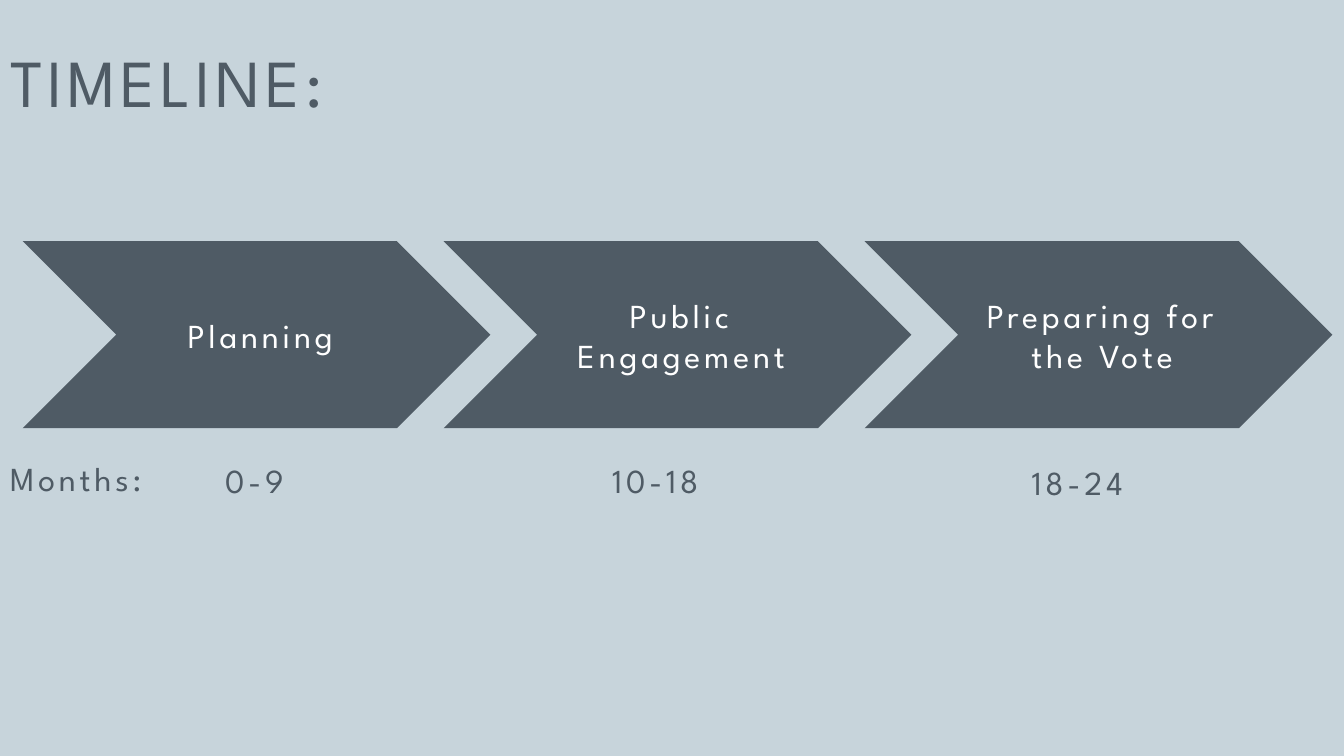
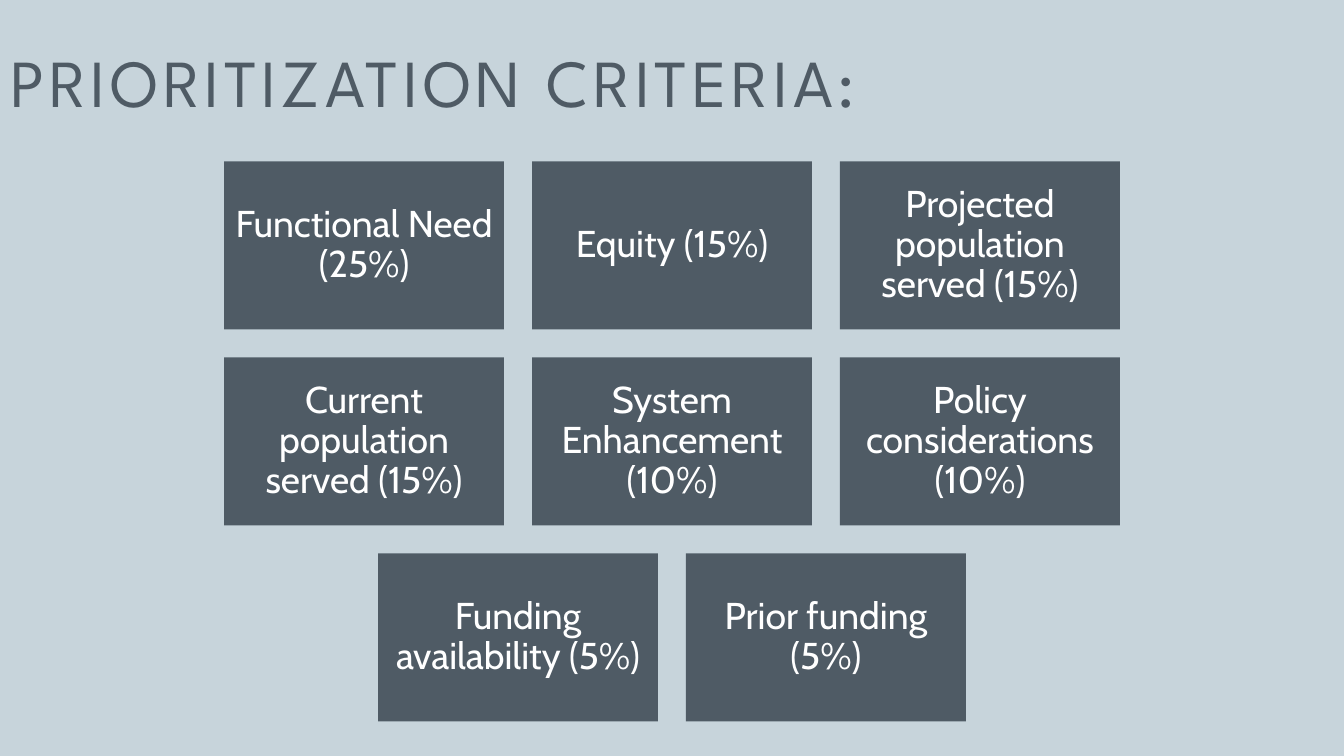
from pptx import Presentation
from pptx.dml.color import RGBColor
from pptx.enum.shapes import MSO_SHAPE as Shape
from pptx.enum.text import MSO_ANCHOR as Anchor, MSO_AUTO_SIZE as AutoSize, PP_ALIGN as Align
from pptx.util import Cm, Pt

BACKGROUND = RGBColor(0xC7, 0xD4, 0xDB)
SLATE = RGBColor(0x4F, 0x5B, 0x65)
WHITE = RGBColor(0xFF, 0xFF, 0xFF)
HEADING_FONT = "League Spartan"
BODY_FONT = "Cabin"
SLIDE_W, SLIDE_H = 50.8, 28.58

PHASES = ["Planning", "Public Engagement", "Preparing for the Vote"]
MONTHS = [
    ("Months:", 0.13, 17.2, 6.88),
    ("0-9", 8.26, 17.25, 3.33),
    ("10-18", 22.89, 17.25, 4.67),
    ("18-24", 38.74, 17.32, 5.05),
]
CRITERIA = [
    ["Functional Need (25%)", "Equity (15%)", "Projected population served (15%)"],
    ["Current population served (15%)", "System Enhancement (10%)",
     "Policy considerations (10%)"],
    ["Funding availability (5%)", "Prior funding (5%)"],
]


def write_text(sp, text, size=36, font=HEADING_FONT, color=SLATE, spacing=0.0,
               align=Align.LEFT, anchor=Anchor.TOP, insets=(0.25, 0.13, 0.25, 0.13),
               line_spacing=None, wrap=True, grow=False):
    tf = sp.text_frame
    tf.word_wrap = wrap
    tf.auto_size = AutoSize.SHAPE_TO_FIT_TEXT if grow else AutoSize.NONE
    tf.vertical_anchor = anchor
    tf.margin_left, tf.margin_top, tf.margin_right, tf.margin_bottom = map(Cm, insets)
    p = tf.paragraphs[0]
    p.alignment = align
    p.line_spacing = line_spacing
    r = p.add_run()
    r.text = text
    r.font.name = font
    r.font.size = Pt(size)
    r.font.color.rgb = color
    if spacing:
        r._r.get_or_add_rPr().set("spc", str(round(spacing * 100)))


def add_text(s, text, left, top, width, height, **style):
    sp = s.shapes.add_textbox(Cm(left), Cm(top), Cm(width), Cm(height))
    write_text(sp, text, **style)


def add_block(s, kind, text, left, top, width, height, **style):
    sp = s.shapes.add_shape(kind, Cm(left), Cm(top), Cm(width), Cm(height))
    sp.shadow.inherit = False
    sp.fill.solid()
    sp.fill.fore_color.rgb = SLATE
    sp.line.fill.background()
    write_text(sp, text, color=WHITE, align=Align.CENTER, anchor=Anchor.MIDDLE, **style)


def add_titled_slide(prs, title, title_width):
    s = prs.slides.add_slide(prs.slide_layouts[6])
    s.background.fill.solid()
    s.background.fill.fore_color.rgb = BACKGROUND
    add_text(s, title, 0.38, 0.53, title_width, 3.81, size=72, spacing=4.9,
             insets=(0, 0, 0, 0), line_spacing=Pt(114.5), grow=True)
    return s


def add_phases(s, left, top, width, height):
    overlap = height / 4
    chevron_w = (width + overlap * (len(PHASES) - 1)) / len(PHASES)
    for i, phase in enumerate(PHASES):
        add_block(s, Shape.CHEVRON, phase, left + i * (chevron_w - overlap), top,
                  chevron_w, height, spacing=4.1, insets=(0.41, 0.13, 0.13, 0.13))


def add_months(s):
    for text, left, top, width in MONTHS:
        add_text(s, text, left, top, width, 1.8, spacing=4.1, wrap=False, grow=True)


def add_criteria(s, left, top, width, height, gap=1.06):
    card_w = (width - 2 * gap) / 3
    card_h = (height - 2 * gap) / 3
    for i, row in enumerate(CRITERIA):
        row_w = len(row) * (card_w + gap) - gap
        row_left = left + (width - row_w) / 2
        for j, criterion in enumerate(row):
            add_block(s, Shape.RECTANGLE, criterion, row_left + j * (card_w + gap),
                      top + i * (card_h + gap), card_w, card_h, size=40,
                      font=BODY_FONT, insets=(0.43,) * 4, line_spacing=0.9)


def main():
    prs = Presentation()
    prs.slide_width, prs.slide_height = Cm(SLIDE_W), Cm(SLIDE_H)

    timeline = add_titled_slide(prs, "TIMELINE:", 41.76)
    add_phases(timeline, 0.86, 9.12, 49.5, 7.07)
    add_months(timeline)

    priorities = add_titled_slide(prs, "PRIORITIZATION CRITERIA:", 49.78)
    add_criteria(priorities, 8.47, 6.1, 33.86, 21.17)

    prs.save("out.pptx")


if __name__ == "__main__":
    main()
